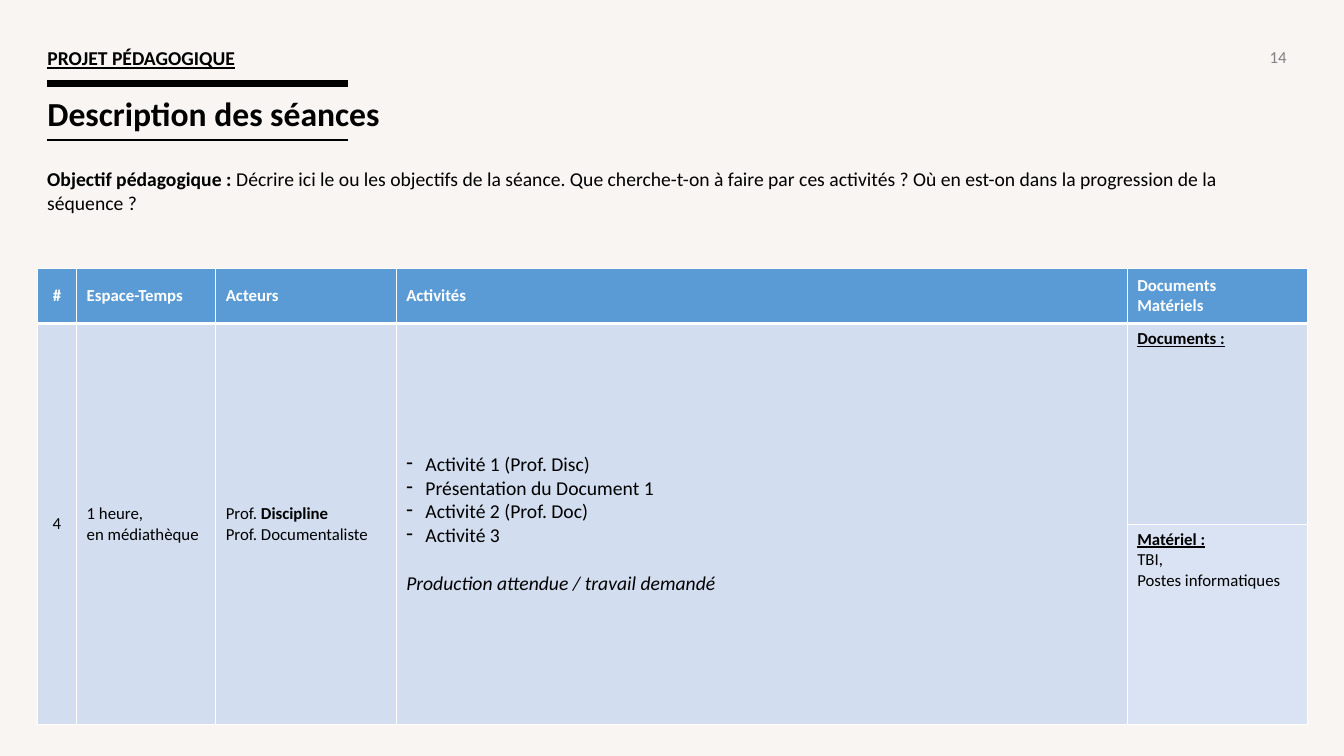
import dataclasses

import pptx
import pptx.dml.color
import pptx.enum.shapes
import pptx.enum.text
import pptx.oxml
import pptx.oxml.ns
import pptx.util

Inches = pptx.util.Inches
Pt = pptx.util.Pt
RGBColor = pptx.dml.color.RGBColor
Align = pptx.enum.text.PP_ALIGN
Anchor = pptx.enum.text.MSO_ANCHOR
Fit = pptx.enum.text.MSO_AUTO_SIZE

CREAM = RGBColor(0xF8, 0xF5, 0xF3)
BLACK = RGBColor(0x00, 0x00, 0x00)
WHITE = RGBColor(0xFF, 0xFF, 0xFF)
GREY = RGBColor(0x80, 0x80, 0x80)
BLUE = RGBColor(0x5B, 0x9B, 0xD5)
PALE = RGBColor(0xD2, 0xDE, 0xEF)
LIGHT = RGBColor(0xDA, 0xE3, 0xF3)
FONT = "Calibri"


@dataclasses.dataclass
class Run:
    text: str
    size: float = 12
    color: RGBColor = BLACK
    bold: bool = False
    italic: bool = False
    under: bool = False


@dataclasses.dataclass
class Para:
    runs: list[Run]
    align: Align = Align.LEFT
    dash: bool = False
    before: float = 0


@dataclasses.dataclass
class Box:
    left: float
    top: float
    width: float
    height: float
    para: Para
    tight: bool = False
    anchor: Anchor = Anchor.TOP


@dataclasses.dataclass
class Cell:
    row: int
    col: int
    paras: list[Para]
    fill: RGBColor = PALE
    anchor: Anchor = Anchor.MIDDLE


@dataclasses.dataclass
class Rule:
    top: float
    weight: float


def add_dash(line) -> None:
    props = line._p.get_or_add_pPr()
    props.set("marL", str(Inches(0.19)))
    props.set("indent", str(-Inches(0.19)))
    bullet = pptx.oxml.parse_xml(
        f'<a:buChar {pptx.oxml.ns.nsdecls("a")} char="-"/>')
    props.append(bullet)


def write(frame, paras: list[Para]) -> None:
    for i, para in enumerate(paras):
        line = frame.paragraphs[0] if i == 0 else frame.add_paragraph()
        line.alignment = para.align
        line.space_before = Pt(para.before)
        if para.dash:
            add_dash(line)
        for run in para.runs:
            for j, part in enumerate(run.text.split("\n")):
                if j:
                    line.add_line_break()
                if not part:
                    continue
                piece = line.add_run()
                piece.text = part
                font = piece.font
                font.name, font.size = FONT, Pt(run.size)
                font.bold, font.italic = run.bold, run.italic
                font.underline = run.under
                font.color.rgb = run.color


def draw_box(slide, box: Box) -> None:
    shape = slide.shapes.add_textbox(
        Inches(box.left), Inches(box.top), Inches(box.width), Inches(box.height))
    frame = shape.text_frame
    frame.word_wrap = not box.tight
    frame.vertical_anchor = box.anchor
    if box.tight:
        frame.auto_size = Fit.SHAPE_TO_FIT_TEXT
        frame.margin_left = frame.margin_right = 0
        frame.margin_top = frame.margin_bottom = 0
    write(frame, [box.para])


def draw_rule(slide, rule: Rule) -> None:
    line = slide.shapes.add_connector(
        pptx.enum.shapes.MSO_CONNECTOR.STRAIGHT,
        Inches(0.47), Inches(rule.top), Inches(3.45), Inches(rule.top))
    line.line.color.rgb = BLACK
    line.line.width = Pt(rule.weight)
    line._element.spPr.append(pptx.oxml.parse_xml(
        f'<a:effectLst {pptx.oxml.ns.nsdecls("a")}/>'))


def add_edges(cell, row: int) -> None:
    props = cell._tc.get_or_add_tcPr()
    for side in "LRTB":
        thick = (row, side) in ((0, "B"), (1, "T"))
        props.append(pptx.oxml.parse_xml(
            f'<a:ln{side} {pptx.oxml.ns.nsdecls("a")} w="{Pt(3 if thick else 1)}">'
            f'<a:solidFill><a:srgbClr val="{WHITE}"/></a:solidFill></a:ln{side}>'))


def draw_table(slide, cols: list[float], rows: list[float],
               cells: list[Cell]) -> None:
    table = slide.shapes.add_table(
        len(rows), len(cols), Inches(0.37), Inches(2.66),
        Inches(sum(cols)), Inches(sum(rows))).table
    for col, width in zip(table.columns, cols):
        col.width = Inches(width)
    for row, height in zip(table.rows, rows):
        row.height = Inches(height)
    for r in range(len(rows)):
        for c in range(len(cols)):
            add_edges(table.cell(r, c), r)
    # All columns but the last span both body rows
    for c in range(len(cols) - 1):
        table.cell(1, c).merge(table.cell(2, c))
    for item in cells:
        cell = table.cell(item.row, item.col)
        cell.fill.solid()
        cell.fill.fore_color.rgb = item.fill
        cell.vertical_anchor = item.anchor
        write(cell.text_frame, item.paras)


# Headings, page number and objective
BOXES = [
    Box(9.86, 0.36, 3, 0.4, Para([Run("14", color=GREY)], Align.RIGHT),
        anchor=Anchor.MIDDLE),
    Box(0.47, 0.92, 3.33, 0.4,
        Para([Run("Description des séances", 24, bold=True)]), tight=True),
    Box(0.47, 0.46, 1.89, 0.24,
        Para([Run("PROJET PÉDAGOGIQUE", 14, bold=True, under=True)]), tight=True),
    Box(0.37, 1.61, 12.6, 0.98, Para([
        Run("Objectif pédagogique : ", 14, bold=True),
        Run("Décrire ici le ou les objectifs de la séance. Que cherche-t-on à "
            "faire par ces activités ? Où en est-on dans la progression de la "
            "séquence ?", 14)])),
]
RULES = [Rule(1.39, 2), Rule(0.83, 5)]

# Table content
COLS = [0.39, 1.38, 1.79, 7.25, 1.79]
ROWS = [0.55, 1.99, 1.99]
HEADS = ["#", "Espace-Temps", "Acteurs", "Activités", "Documents\nMatériels"]
TASKS = ["Activité 1 (Prof. Disc)", "Présentation du Document 1",
         "Activité 2 (Prof. Doc)", "Activité 3"]
CELLS = [
    Cell(0, c, [Para([Run(head, color=WHITE, bold=True)],
                     Align.LEFT if c else Align.CENTER)], BLUE)
    for c, head in enumerate(HEADS)
] + [
    Cell(1, 0, [Para([Run("4")], Align.CENTER)]),
    Cell(1, 1, [Para([Run("1 heure, \nen médiathèque")])]),
    Cell(1, 2, [Para([Run("Prof. "), Run("Discipline\n", bold=True),
                      Run("Prof. Documentaliste")])]),
    Cell(1, 3, [Para([Run(task, 14)], dash=True) for task in TASKS] + [
        Para([Run("Production attendue / travail demandé", 14, italic=True)],
             before=17)]),
    Cell(1, 4, [Para([Run("Documents :", bold=True, under=True)])],
         anchor=Anchor.TOP),
    Cell(2, 4, [Para([Run("Matériel :", bold=True, under=True)]),
                Para([Run("TBI,")]), Para([Run("Postes informatiques")])],
         LIGHT, Anchor.TOP),
]


def main() -> None:
    deck = pptx.Presentation()
    deck.slide_width, deck.slide_height = Inches(13.33), Inches(7.5)
    slide = deck.slides.add_slide(deck.slide_layouts[6])
    slide.background.fill.solid()
    slide.background.fill.fore_color.rgb = CREAM
    draw_table(slide, COLS, ROWS, CELLS)
    for box in BOXES:
        draw_box(slide, box)
    for rule in RULES:
        draw_rule(slide, rule)
    deck.save("out.pptx")


if __name__ == "__main__":
    main()
